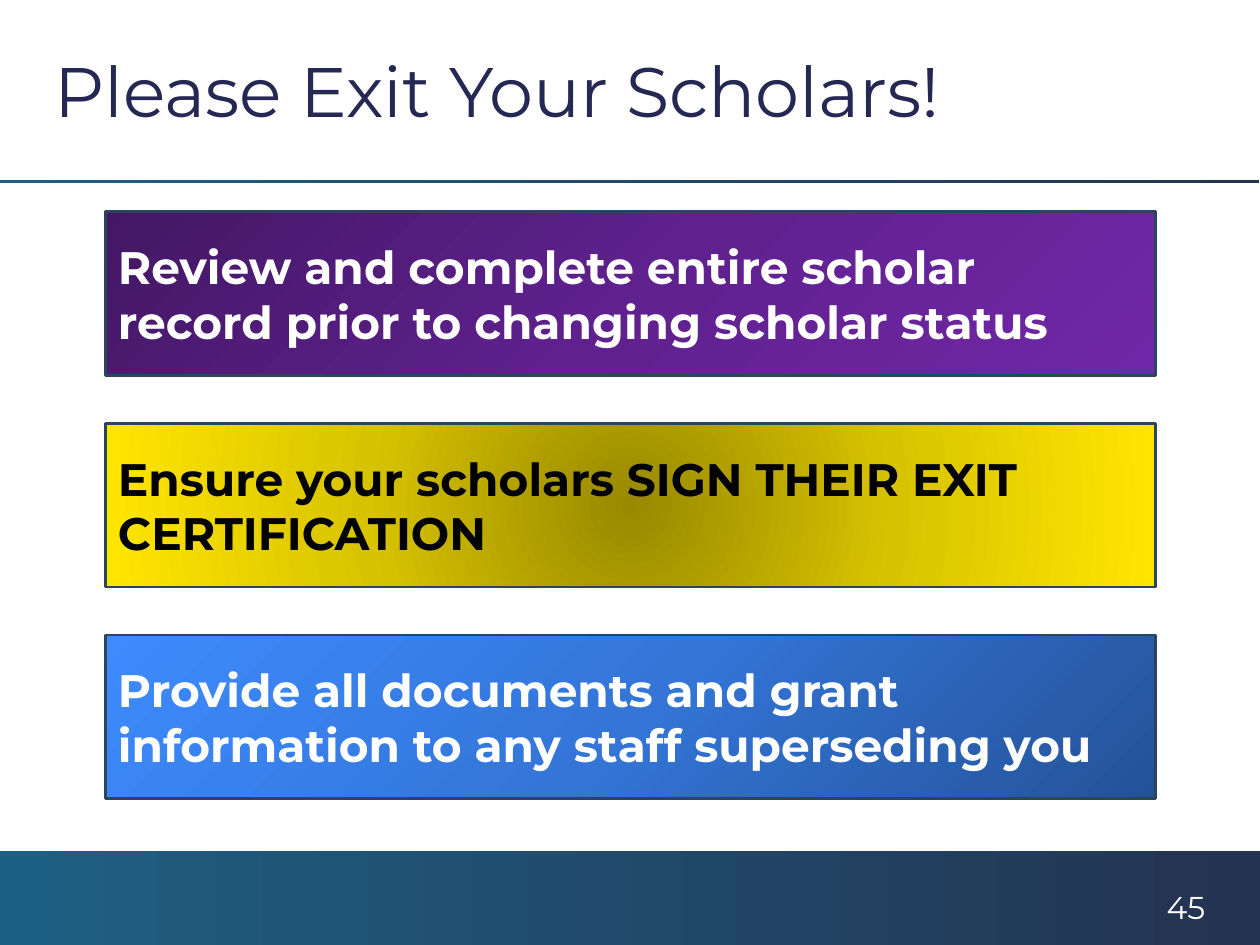
import dataclasses

import pptx
import pptx.dml.color
import pptx.enum.shapes
import pptx.enum.text
import pptx.oxml
import pptx.oxml.ns
import pptx.util

Pt = pptx.util.Pt
ANCHOR = pptx.enum.text.MSO_ANCHOR


@dataclasses.dataclass(frozen=True)
class Theme:
    font: str = "Montserrat"
    title_size: int = 40
    card_size: int = 26
    number_size: int = 18
    navy: str = "242852"
    white: str = "FFFFFF"
    black: str = "000000"
    outline: str = "2B455C"
    band: tuple = ("1E6083", "243352")
    purple: tuple = ("431764", "5F218E", "7128A8")
    yellow: tuple = ("988900", "D8C300", "FFE601")
    blue: tuple = ("245297", "3475D7", "3D8BFF")


THEME = Theme()


def rgb(color):
    return pptx.dml.color.RGBColor.from_string(color)


def fill_gradient(s, colors, angle):
    """Evenly spaced stops; an angle of None gives a radial gradient."""
    step = 100000 // (len(colors) - 1)
    stops = "".join(f'<a:gs pos="{i * step}"><a:srgbClr val="{c}"/></a:gs>'
                    for i, c in enumerate(colors))
    if angle is None:
        shade = ('<a:path path="circle"><a:fillToRect l="50000" t="50000" '
                 'r="50000" b="50000"/></a:path>')
    else:
        shade = f'<a:lin ang="{angle * 60000}" scaled="0"/>'
    grad = pptx.oxml.parse_xml(
        f'<a:gradFill {pptx.oxml.ns.nsdecls("a")} rotWithShape="1">'
        f'<a:gsLst>{stops}</a:gsLst>{shade}</a:gradFill>')
    s.fill.background()
    sp_pr = s._element.spPr
    sp_pr.replace(sp_pr.find(pptx.oxml.ns.qn("a:noFill")), grad)


def add_rect(slide, box, colors, angle):
    s = slide.shapes.add_shape(pptx.enum.shapes.MSO_SHAPE.RECTANGLE,
                               *map(Pt, box))
    s.shadow.inherit = False
    s.line.fill.background()
    fill_gradient(s, colors, angle)
    return s


def write_text(s, text, size, color, bold=False, anchor=ANCHOR.MIDDLE):
    tf = s.text_frame
    frame = {"word_wrap": True, "vertical_anchor": anchor,
             "auto_size": pptx.enum.text.MSO_AUTO_SIZE.NONE}
    for name, value in frame.items():
        setattr(tf, name, value)
    p = tf.paragraphs[0]
    p.alignment = pptx.enum.text.PP_ALIGN.LEFT
    r = p.add_run()
    r.text = text
    for name, value in {"name": THEME.font, "size": Pt(size), "bold": bold}.items():
        setattr(r.font, name, value)
    r.font.color.rgb = rgb(color)


def add_title(slide, box, text):
    s = slide.shapes.title
    for name, value in zip(("left", "top", "width", "height"), box):
        setattr(s, name, Pt(value))
    write_text(s, text, THEME.title_size, THEME.navy)


def add_footer(slide, box, number):
    x, y, w, h = box
    add_rect(slide, box, THEME.band, 0)
    s = slide.shapes.add_textbox(Pt(x + w - 60.5), Pt(y + 18), Pt(41.8), Pt(19.4))
    write_text(s, number, THEME.number_size, THEME.white, anchor=ANCHOR.TOP)


def add_cards(slide, box, cards, gap):
    """Stack equal cards down the box."""
    x, y, w, h = box
    card_h = (h - gap * (len(cards) - 1)) / len(cards)
    for i, (text, color, colors, angle) in enumerate(cards):
        s = add_rect(slide, (x, y + i * (card_h + gap), w, card_h), colors, angle)
        s.line.color.rgb = rgb(THEME.outline)
        s.line.width = Pt(1.5)
        write_text(s, text, THEME.card_size, color, bold=True)


def main():
    prs = pptx.Presentation()
    prs.slide_width, prs.slide_height = Pt(720), Pt(540)
    slide = prs.slides.add_slide(prs.slide_layouts[5])

    # Footer band with page number, and the rule under the title
    add_footer(slide, (0, 486, 720, 54), "45")
    add_rect(slide, (-0.7, 102.8, 720, 2), THEME.band, 0)

    add_title(slide, (23.8, 12.2, 666, 77.8), "Please Exit Your Scholars!")

    # Three reminder cards
    add_cards(slide, (60.3, 121, 600, 335.5), [
        ("Review and complete entire scholar record prior to changing scholar status",
         THEME.white, THEME.purple, 45),
        ("Ensure your scholars SIGN THEIR EXIT CERTIFICATION",
         THEME.black, THEME.yellow, None),
        ("Provide all documents and grant information to any staff superseding you",
         THEME.white, THEME.blue, 225),
    ], gap=27.4)

    prs.save("out.pptx")


if __name__ == "__main__":
    main()
